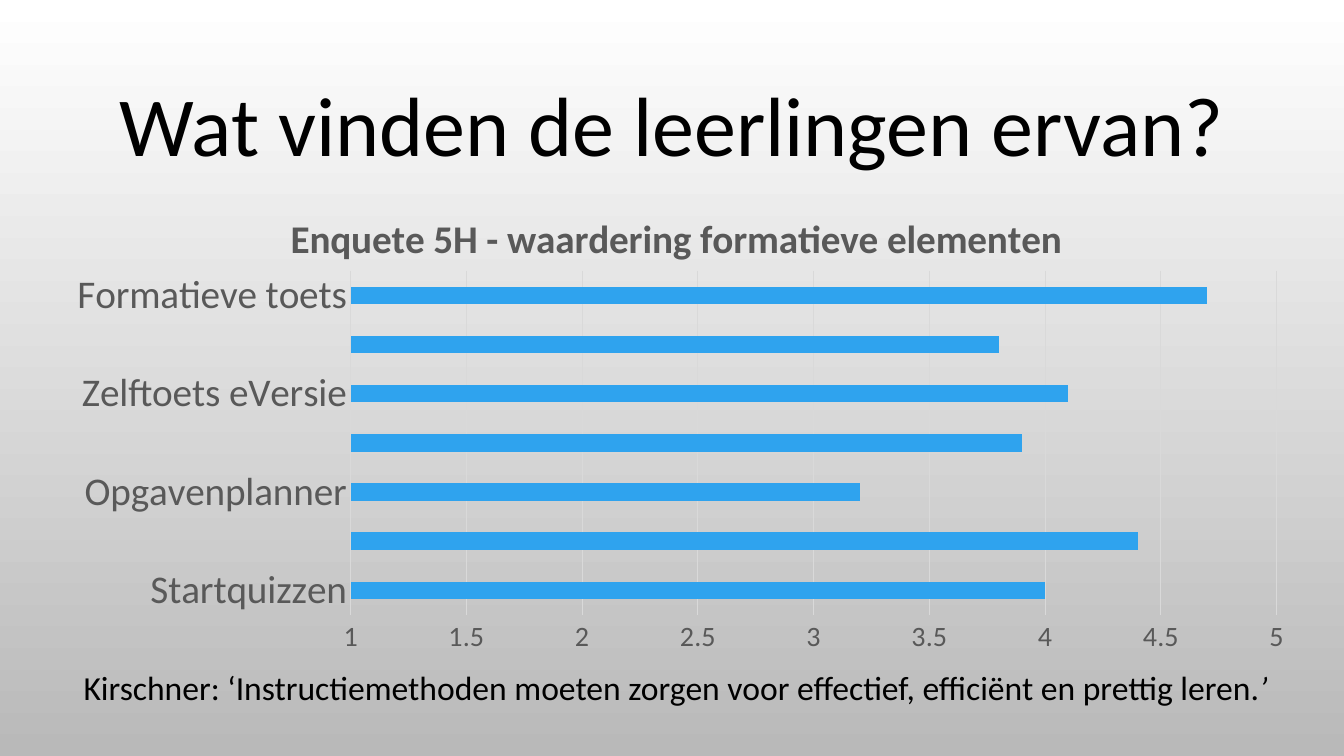
from dataclasses import dataclass

from lxml import etree
from pptx import Presentation
from pptx.chart.chart import Chart
from pptx.chart.data import CategoryChartData
from pptx.dml.color import RGBColor
from pptx.enum.chart import XL_CHART_TYPE, XL_TICK_MARK
from pptx.enum.text import MSO_ANCHOR, MSO_AUTO_SIZE, PP_ALIGN
from pptx.oxml.ns import qn
from pptx.slide import Slide
from pptx.util import Inches, Pt

BAR_CLUSTERED = XL_CHART_TYPE.BAR_CLUSTERED
NO_TICK = XL_TICK_MARK.NONE
MIDDLE = MSO_ANCHOR.MIDDLE
GROW = MSO_AUTO_SIZE.SHAPE_TO_FIT_TEXT
NO_AUTOFIT = MSO_AUTO_SIZE.NONE
CENTER = PP_ALIGN.CENTER
JUSTIFY = PP_ALIGN.JUSTIFY

WHITE = RGBColor(0xFF, 0xFF, 0xFF)
SILVER = RGBColor(0xB9, 0xB9, 0xB9)
BLACK = RGBColor(0x00, 0x00, 0x00)
DARK_GRAY = RGBColor(0x59, 0x59, 0x59)
GRID_GRAY = RGBColor(0xD9, 0xD9, 0xD9)
BLUE = RGBColor(0x2F, 0xA3, 0xEE)

FONT = "Calibri"
SLIDE_WIDTH = Inches(13.33)
SLIDE_HEIGHT = Inches(7.5)
TITLE_ONLY_LAYOUT = 5


@dataclass(frozen=True)
class Region:
    """Position and size in percent of the slide."""

    left: float
    top: float
    width: float
    height: float

    def lengths(self) -> tuple[int, int, int, int]:
        return (
            round(SLIDE_WIDTH * self.left / 100),
            round(SLIDE_HEIGHT * self.top / 100),
            round(SLIDE_WIDTH * self.width / 100),
            round(SLIDE_HEIGHT * self.height / 100),
        )


@dataclass(frozen=True)
class Rating:
    element: str
    score: float


TITLE_REGION = Region(7.5, 9.07, 85, 16.13)
CHART_REGION = Region(3.75, 25.2, 93.1, 62.4)
QUOTE_REGION = Region(5.48, 87.6, 89.72, 6.67)
PLOT_SHARES = {"x": 0.24, "y": 0.17, "w": 0.74, "h": 0.73}

RATINGS = (
    Rating("Startquizzen", 4),
    Rating("Opgavenbundel", 4.4),
    Rating("Opgavenplanner", 3.2),
    Rating("Oefenvragen eVersie", 3.9),
    Rating("Zelftoets eVersie", 4.1),
    Rating("Experimenten", 3.8),
    Rating("Formatieve toets", 4.7),
)


def style_font(font, size: int, color: RGBColor) -> None:
    font.name = FONT
    font.size = Pt(size)
    font.color.rgb = color


def paint_background(slide: Slide) -> None:
    fill = slide.background.fill
    fill.gradient()
    fill.gradient_angle = 270
    for stop, position, color in zip(fill.gradient_stops, (0, 1), (WHITE, SILVER)):
        stop.position = position
        stop.color.rgb = color


def fill_title(slide: Slide) -> None:
    title = slide.shapes.title
    title.left, title.top, title.width, title.height = TITLE_REGION.lengths()
    frame = title.text_frame
    frame.text = "Wat vinden de leerlingen ervan?"
    frame.vertical_anchor = MIDDLE
    frame.auto_size = NO_AUTOFIT
    paragraph = frame.paragraphs[0]
    paragraph.alignment = CENTER
    paragraph.line_spacing = 0.9
    style_font(paragraph.font, 60, BLACK)


def place_plot(chart: Chart) -> None:
    plot_area = chart.plots[0]._element.getparent()
    for old_layout in plot_area.findall(qn("c:layout")):
        plot_area.remove(old_layout)
    layout = etree.Element(qn("c:layout"))
    manual = etree.SubElement(layout, qn("c:manualLayout"))
    settings = {"layoutTarget": "inner", "xMode": "edge", "yMode": "edge", **PLOT_SHARES}
    for name, value in settings.items():
        etree.SubElement(manual, qn(f"c:{name}")).set("val", str(value))
    plot_area.insert(0, layout)


def style_axes(chart: Chart) -> None:
    for axis, size in ((chart.category_axis, 28), (chart.value_axis, 20)):
        axis.major_tick_mark = NO_TICK
        axis.minor_tick_mark = NO_TICK
        style_font(axis.tick_labels.font, size, DARK_GRAY)
    values = chart.value_axis
    values.minimum_scale = 1
    values.maximum_scale = 5
    values.major_unit = 0.5
    values.has_major_gridlines = True
    values.format.line.fill.background()
    for line in (chart.category_axis.format.line, values.major_gridlines.format.line):
        line.color.rgb = GRID_GRAY
        line.width = Pt(0.75)


def add_ratings_chart(slide: Slide) -> None:
    data = CategoryChartData()
    data.categories = [rating.element for rating in RATINGS]
    data.add_series("Series 1", [rating.score for rating in RATINGS])
    frame = slide.shapes.add_chart(BAR_CLUSTERED, *CHART_REGION.lengths(), data)
    chart = frame.chart
    style_font(chart.font, 10, BLACK)
    chart.has_legend = False
    chart.has_title = True
    title_frame = chart.chart_title.text_frame
    title_frame.text = "Enquete 5H - waardering formatieve elementen"
    title_font = title_frame.paragraphs[0].font
    style_font(title_font, 28, DARK_GRAY)
    title_font.bold = True
    chart.chart_title.include_in_layout = False
    plot = chart.plots[0]
    plot.gap_width = 182
    plot.vary_by_categories = False
    bar_fill = plot.series[0].format.fill
    bar_fill.solid()
    bar_fill.fore_color.rgb = BLUE
    style_axes(chart)
    place_plot(chart)


def add_quote(slide: Slide) -> None:
    frame = slide.shapes.add_textbox(*QUOTE_REGION.lengths()).text_frame
    frame.word_wrap = True
    frame.auto_size = GROW
    paragraph = frame.paragraphs[0]
    paragraph.alignment = JUSTIFY
    style_font(paragraph.font, 24, BLACK)
    paragraph.add_run().text = (
        "Kirschner: ‘Instructiemethoden moeten zorgen voor effectief, "
        "efficiënt en prettig leren."
    )
    closing_mark = paragraph.add_run()
    closing_mark.text = "’"
    closing_mark.font.italic = True


def main() -> None:
    presentation = Presentation()
    presentation.slide_width = SLIDE_WIDTH
    presentation.slide_height = SLIDE_HEIGHT
    slide = presentation.slides.add_slide(presentation.slide_layouts[TITLE_ONLY_LAYOUT])
    paint_background(slide)
    fill_title(slide)
    add_ratings_chart(slide)
    add_quote(slide)
    presentation.save("out.pptx")


if __name__ == "__main__":
    main()
